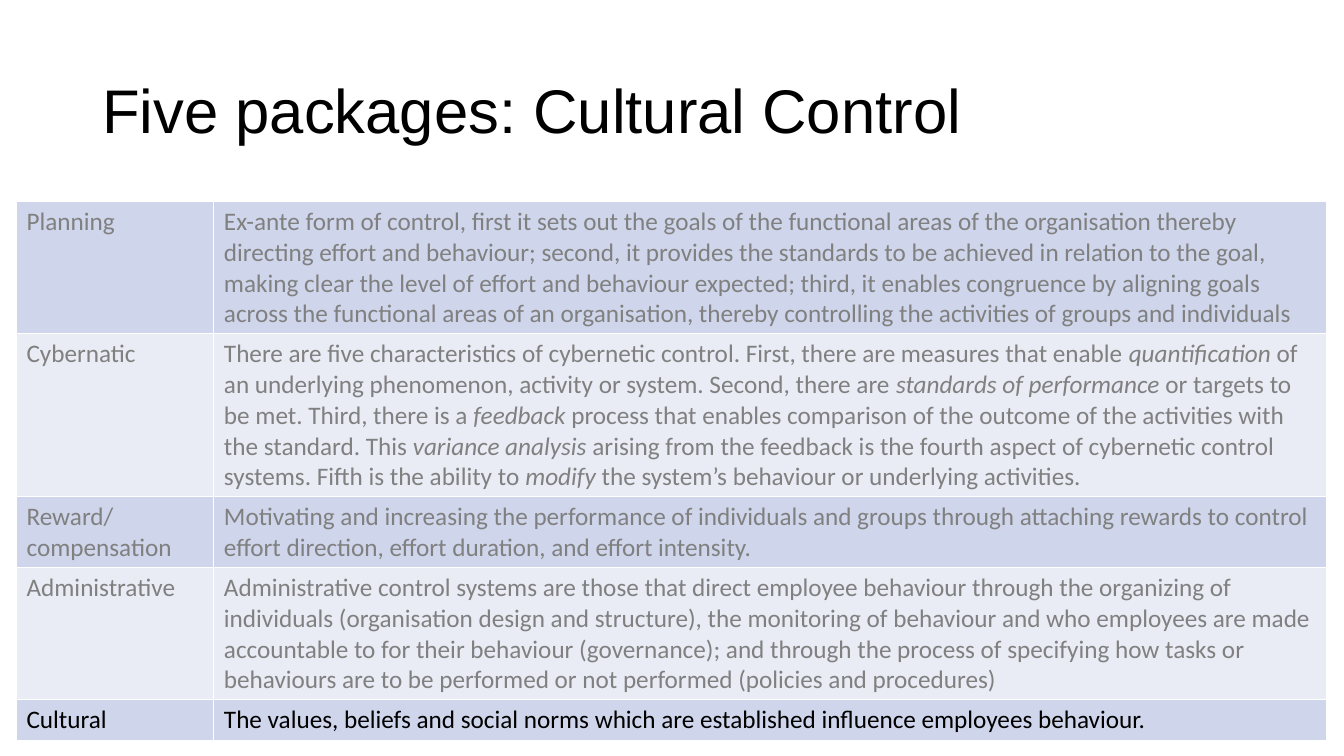
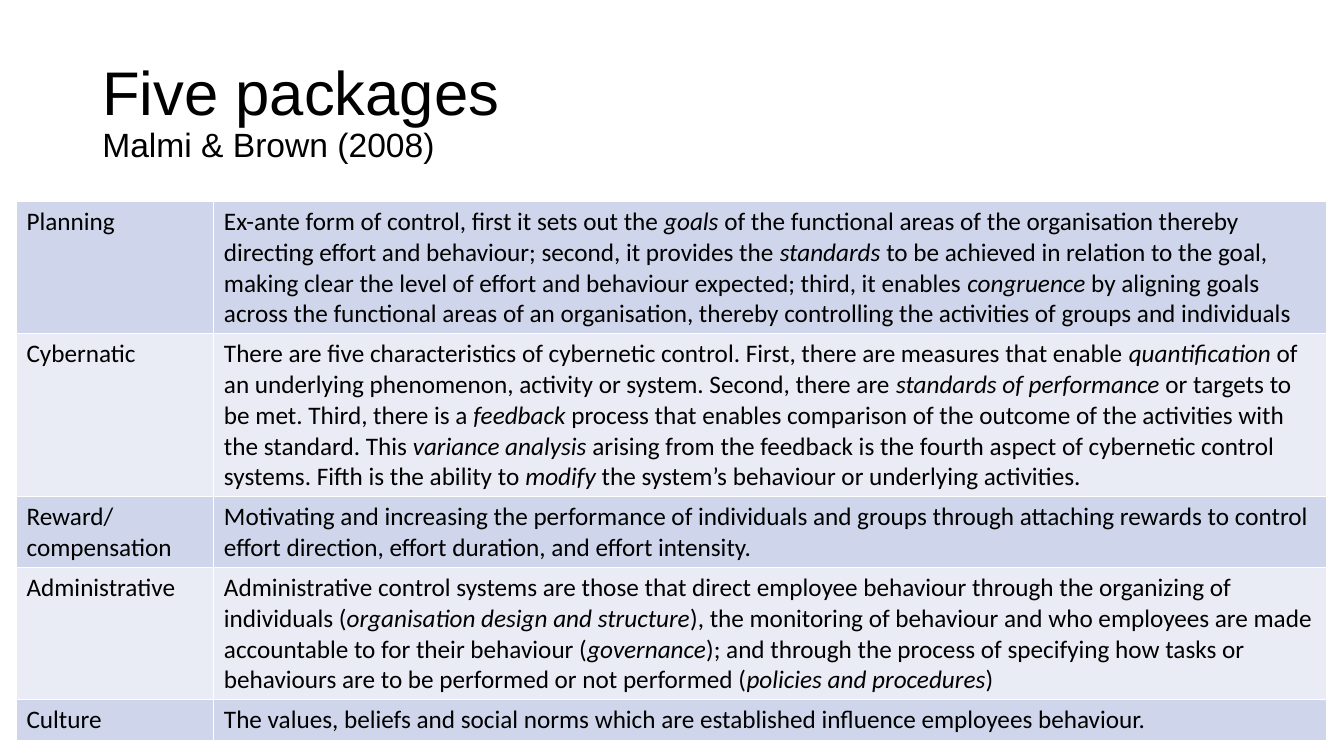
from lxml.etree import SubElement
from pptx import Presentation
from pptx.dml.color import RGBColor
from pptx.enum.text import MSO_ANCHOR
from pptx.oxml.ns import qn
from pptx.util import Pt

BLACK, GREY, WHITE = "000000", "808080", "FFFFFF"
BANDS = ("CFD5EA", "E9EBF5")
TITLE_BOX = (66, 28.8, 828, 104.4)
TABLE_BOX = (11.8, 144, 936)
LABEL_WIDTH = 141
LINE_HEIGHT, CELL_PADDING = 21.8, 7.2

# Each package: label, lines of text, description with *italic* stretches.
PACKAGES = [
    ("Planning", 4,
     "Ex-ante form of control, first it sets out the *goals* of the functional areas of the "
     "organisation thereby directing effort and behaviour; second, it provides the *standards* "
     "to be achieved in relation to the goal, making clear the level of effort and behaviour "
     "expected; third, it enables *congruence* by aligning goals across the functional areas of "
     "an organisation, thereby controlling the activities of groups and individuals"),
    ("Cybernatic", 5,
     "There are five characteristics of cybernetic control. First, there are measures that "
     "enable *quantification* of an underlying phenomenon, activity or system. Second, there are "
     "*standards of performance* or targets to be met. Third, there is a *feedback* process that "
     "enables comparison of the outcome of the activities with the standard. This *variance "
     "analysis *arising from the feedback is the fourth aspect of cybernetic control systems. "
     "Fifth is the ability to *modify* the system’s behaviour or underlying activities."),
    ("Reward/ compensation", 2,
     "Motivating and increasing the performance of individuals and groups through attaching "
     "rewards to control effort direction, effort duration, and effort intensity."),
    ("Administrative", 4,
     "Administrative control systems are those that direct employee behaviour through the "
     "organizing of individuals (*organisation design and structure*), the monitoring of "
     "behaviour and who employees are made accountable to for their behaviour (*governance*); "
     "and through the process of specifying how tasks or behaviours are to be performed or not "
     "performed (*policies and procedures*)"),
    ("Culture", 1,
     "The values, beliefs and social norms which are established influence employees behaviour."),
]


def rgb(value):
    return RGBColor.from_string(value)


def add_title(page, box, title, subtitle=None):
    frame = page.shapes.add_textbox(*map(Pt, box)).text_frame
    frame.word_wrap = True
    frame.vertical_anchor = MSO_ANCHOR.MIDDLE
    para = frame.paragraphs[0]
    para.line_spacing = 0.9
    para.font.name = "Arial"
    para.font.color.rgb = rgb(BLACK)
    span = para.add_run()
    span.text = title
    span.font.size = Pt(44)
    if subtitle:
        para.add_line_break()
        span = para.add_run()
        span.text = subtitle
        span.font.size = Pt(24)


def add_borders(cell):
    properties = cell._tc.get_or_add_tcPr()
    for side in ("lnL", "lnR", "lnT", "lnB"):
        line = SubElement(properties, qn(f"a:{side}"), w=str(Pt(1)))
        fill = SubElement(line, qn("a:solidFill"))
        SubElement(fill, qn("a:srgbClr"), val=WHITE)


def fill_cell(cell, text, band, color):
    """Style one cell; text between asterisks becomes italic."""
    add_borders(cell)
    cell.fill.solid()
    cell.fill.fore_color.rgb = rgb(band)
    para = cell.text_frame.paragraphs[0]
    para.font.name = "Calibri"
    para.font.size = Pt(18)
    para.font.color.rgb = rgb(color)
    for index, part in enumerate(text.split("*")):
        span = para.add_run()
        span.text = part
        if index % 2:
            span.font.italic = True


def add_package_table(page, box, packages, colors):
    left, top, width = box
    heights = [lines * LINE_HEIGHT + CELL_PADDING for _, lines, _ in packages]
    table = page.shapes.add_table(
        len(packages), 2, Pt(left), Pt(top), Pt(width), Pt(sum(heights))).table
    table.first_row = table.horz_banding = False
    table.columns[0].width = Pt(LABEL_WIDTH)
    table.columns[1].width = Pt(width - LABEL_WIDTH)
    for index, (label, _, description) in enumerate(packages):
        table.rows[index].height = Pt(heights[index])
        for column, text in enumerate((label, description)):
            fill_cell(table.cell(index, column), text, BANDS[index % 2], colors[index])


def cultural_packages():
    """Vary the packages: italics only for the cybernetic row, last label adjective."""
    labels = {"Culture": "Cultural"}
    return [(labels.get(label, label), lines,
             text if label == "Cybernatic" else text.replace("*", ""))
            for label, lines, text in PACKAGES]


def add_slide(deck, packages, colors, title, subtitle=None):
    page = deck.slides.add_slide(deck.slide_layouts[6])
    add_title(page, TITLE_BOX, title, subtitle)
    add_package_table(page, TABLE_BOX, packages, colors)


def main():
    deck = Presentation()
    deck.slide_width, deck.slide_height = Pt(960), Pt(540)
    add_slide(deck, cultural_packages(), [GREY] * 4 + [BLACK],
              "Five packages: Cultural Control")
    add_slide(deck, PACKAGES, [BLACK] * 5, "Five packages", "Malmi & Brown (2008)")
    deck.save("out.pptx")


if __name__ == "__main__":
    main()
